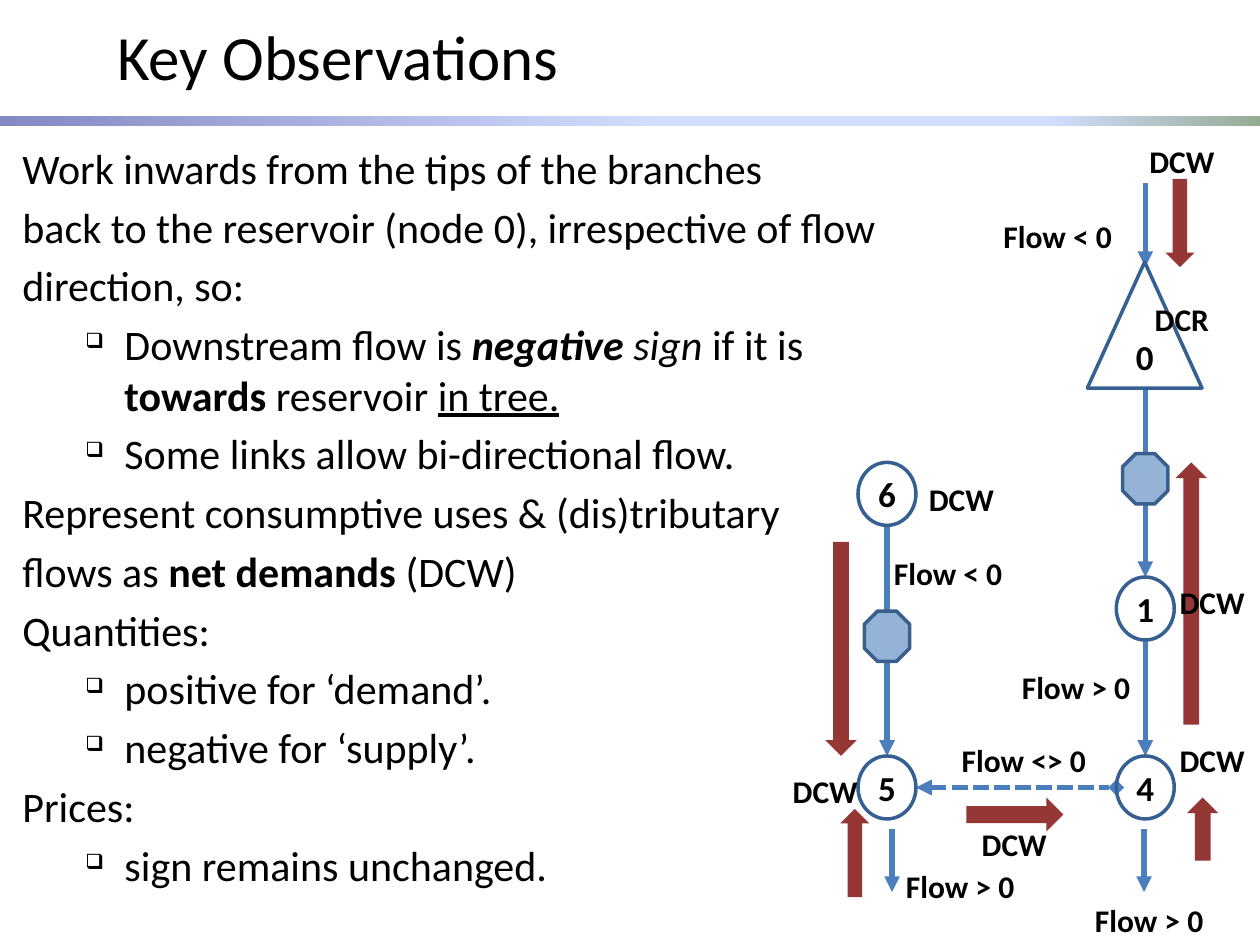
import lxml.etree
import pptx
import pptx.dml.color
import pptx.enum.dml
import pptx.enum.shapes
import pptx.enum.text
import pptx.oxml.ns
import pptx.util

Inches, Pt = pptx.util.Inches, pptx.util.Pt
qn = pptx.oxml.ns.qn
MSO_SHAPE = pptx.enum.shapes.MSO_SHAPE
ANCHOR = pptx.enum.text.MSO_ANCHOR
ALIGN = pptx.enum.text.PP_ALIGN

FONT = "Calibri"
COLORS = {"text": "000000", "link": "4B7EBC", "node": "376092", "price": "953735",
          "plant": "95B3D7", "plant_edge": "3A5F8C"}
BAND_STOPS = [(0, "8488C4"), (53, "D4DEFF"), (83, "D4DEFF"), (100, "96AB94")]

TITLE = "Key Observations"
# (level, runs); a run is (text, styles): b bold, i italic, u underlined
OBSERVATIONS = [
    (0, [("Work inwards from the tips of the branches", "")]),
    (0, [("back to the reservoir (node 0), irrespective of flow", "")]),
    (0, [("direction, so:", "")]),
    (1, [("Downstream flow is ", ""), ("negative", "bi"), (" sign", "i"), (" if it is", ""),
         (" towards ", "b"), ("reservoir ", ""), ("in tree.", "u")]),
    (1, [("Some links allow bi-directional flow.", "")]),
    (0, [("Represent consumptive uses & (dis)tributary", "")]),
    (0, [("flows as ", ""), ("net demands", "b"), (" (DCW)", "")]),
    (0, [("Quantities:", "")]),
    (1, [("positive for ‘demand’.", "")]),
    (1, [("negative for ‘supply’.", "")]),
    (0, [("Prices:", "")]),
    (1, [("sign remains unchanged.", "")]),
]
INDENTS = {0: (0.38, -0.38), 1: (0.81, -0.31)}

# Network: the two branches are vertical lines; y values are tops
LEFT, RIGHT = 7.04, 9.09
NODE_W, NODE_H = 0.46, 0.5
NODES = [("1", RIGHT, 4.58), ("4", RIGHT, 6), ("5", LEFT, 6), ("6", LEFT, 3.67)]
PLANTS = [(LEFT, 4.85), (RIGHT, 3.6)]
FLOWS = [  # x, from y, to y
    (7.08, 6.58, 7.08), (9.08, 6.58, 7.08), (RIGHT, 1.45, 2.12),
    (RIGHT, 5.08, 6), (LEFT, 4.17, 6), (RIGHT, 3.08, 4.58),
]
PRICE_ARROWS = [  # shape, left, top, width, height, rotation
    (MSO_SHAPE.DOWN_ARROW, 6.55, 4.3, 0.25, 1.7, 0),
    (MSO_SHAPE.UP_ARROW, 9.33, 3.67, 0.25, 2.08, 0),
    (MSO_SHAPE.UP_ARROW, 7.92, 6.08, 0.27, 0.77, 90),
    (MSO_SHAPE.DOWN_ARROW, 9.25, 1.42, 0.23, 0.7, 0),
    (MSO_SHAPE.UP_ARROW, 9.42, 6.33, 0.25, 0.5, 0),
    (MSO_SHAPE.UP_ARROW, 6.67, 6.42, 0.23, 0.7, 0),
]
LABELS = [  # text, width, (left, top) places
    ("Flow < 0", 1.13, [(7.83, 1.67), (6.96, 4.35)]),
    ("Flow > 0", 1.08, [(8, 5.25), (8.58, 7.1), (7.08, 6.83)]),
    ("Flow <> 0", 1.25, [(7.5, 5.83)]),
    ("DCW", 0.76, [(6.17, 6.08), (9.24, 4.58), (7.67, 6.5), (9, 1.08),
                   (9.24, 5.83), (7.25, 3.76)]),
    ("DCR", 0.76, [(9, 2.33)]),
]


def rgb(name):
    return pptx.dml.color.RGBColor.from_string(COLORS[name])


def add_run(paragraph, text, size, styles=""):
    run = paragraph.add_run()
    run.text = text
    font = run.font
    font.name, font.size = FONT, Pt(size)
    font.color.rgb = rgb("text")
    font.bold, font.italic, font.underline = ("b" in styles, "i" in styles, "u" in styles)


def add_figure(slide, shape, left, top, width, height, fill=None, edge=None):
    figure = slide.shapes.add_shape(shape, *map(Inches, (left, top, width, height)))
    figure.shadow.inherit = False
    if fill:
        figure.fill.solid()
        figure.fill.fore_color.rgb = rgb(fill)
    else:
        figure.fill.background()
    if edge:
        figure.line.color.rgb = rgb(edge)
        figure.line.width = Pt(2)
    else:
        figure.line.fill.background()
    return figure


def add_node(slide, shape, number, left, top, width, height):
    frame = add_figure(slide, shape, left, top, width, height, edge="node").text_frame
    frame.margin_left = frame.margin_right = frame.margin_top = frame.margin_bottom = 0
    frame.word_wrap = False
    frame.vertical_anchor = ANCHOR.MIDDLE
    frame.paragraphs[0].alignment = ALIGN.CENTER
    add_run(frame.paragraphs[0], number, 20, "b")


def add_flow(slide, start, end, head=None, tail="triangle"):
    flow = slide.shapes.add_connector(pptx.enum.shapes.MSO_CONNECTOR.STRAIGHT,
                                      *map(Inches, start + end))
    flow.line.color.rgb = rgb("link")
    flow.line.width = Pt(3)
    line = flow.line._get_or_add_ln()
    if head:
        flow.line.dash_style = pptx.enum.dml.MSO_LINE.SQUARE_DOT
        lxml.etree.SubElement(line, qn("a:headEnd"), type=head)
    lxml.etree.SubElement(line, qn("a:tailEnd"), type=tail)
    lxml.etree.SubElement(flow._element.spPr, qn("a:effectLst"))


def add_band(slide):
    band = add_figure(slide, MSO_SHAPE.RECTANGLE, 0, 0.92, 10, 0.08)
    band.fill.gradient()
    band.fill.gradient_angle = 0
    stops = band._element.spPr.find(qn("a:gradFill")).find(qn("a:gsLst"))
    for stop in list(stops):
        stops.remove(stop)
    for position, color in BAND_STOPS:
        stop = lxml.etree.SubElement(stops, qn("a:gs"), pos=str(position * 1000))
        lxml.etree.SubElement(stop, qn("a:srgbClr"), val=color)


def add_observations(slide):
    frame = slide.shapes.add_textbox(*map(Inches, (0.08, 1.08, 7.33, 6.42))).text_frame
    frame.word_wrap = True
    for index, (level, runs) in enumerate(OBSERVATIONS):
        paragraph = frame.add_paragraph() if index else frame.paragraphs[0]
        paragraph.level = level
        paragraph.space_before = Pt(4.8)
        margin, indent = INDENTS[level]
        properties = paragraph._p.get_or_add_pPr()
        properties.set("marL", str(Inches(margin)))
        properties.set("indent", str(Inches(indent)))
        if level:
            lxml.etree.SubElement(properties, qn("a:buSzPct"), val="50000")
            lxml.etree.SubElement(properties, qn("a:buChar"), char="❑")
        else:
            lxml.etree.SubElement(properties, qn("a:buNone"))
        for text, styles in runs:
            add_run(paragraph, text, 24, styles)


def add_network(slide):
    for x, start, end in FLOWS:
        add_flow(slide, (x, start), (x, end))
    add_flow(slide, (LEFT + NODE_W / 2, 6.25), (RIGHT - NODE_W / 2, 6.25),
             head="triangle", tail="diamond")
    add_node(slide, MSO_SHAPE.ISOSCELES_TRIANGLE, "0", 8.63, 2.08, 0.91, 1)
    for number, x, top in NODES:
        add_node(slide, MSO_SHAPE.OVAL, number, x - NODE_W / 2, top, NODE_W, NODE_H)
    for x, top in PLANTS:
        add_figure(slide, MSO_SHAPE.OCTAGON, x - 0.18, top, 0.36, 0.4, "plant", "plant_edge")
    for *place, rotation in PRICE_ARROWS:
        add_figure(slide, *place, fill="price").rotation = rotation
    for text, width, places in LABELS:
        for left, top in places:
            frame = slide.shapes.add_textbox(*map(Inches, (left, top, width, 0.4))).text_frame
            frame.word_wrap = False
            frame.auto_size = pptx.enum.text.MSO_AUTO_SIZE.SHAPE_TO_FIT_TEXT
            frame.paragraphs[0].alignment = ALIGN.CENTER
            add_run(frame.paragraphs[0], text, 18, "b")


def main():
    deck = pptx.Presentation()
    deck.slide_width, deck.slide_height = Inches(10), Inches(7.5)
    slide = deck.slides.add_slide(deck.slide_layouts[5])
    title = slide.shapes.title
    title.left, title.top, title.width, title.height = map(Inches, (0.83, 0, 7.17, 0.87))
    title.text_frame.vertical_anchor = ANCHOR.MIDDLE
    title.text_frame.paragraphs[0].alignment = ALIGN.LEFT
    add_run(title.text_frame.paragraphs[0], TITLE, 36)
    add_observations(slide)
    add_band(slide)
    add_network(slide)
    deck.save("out.pptx")


if __name__ == "__main__":
    main()
